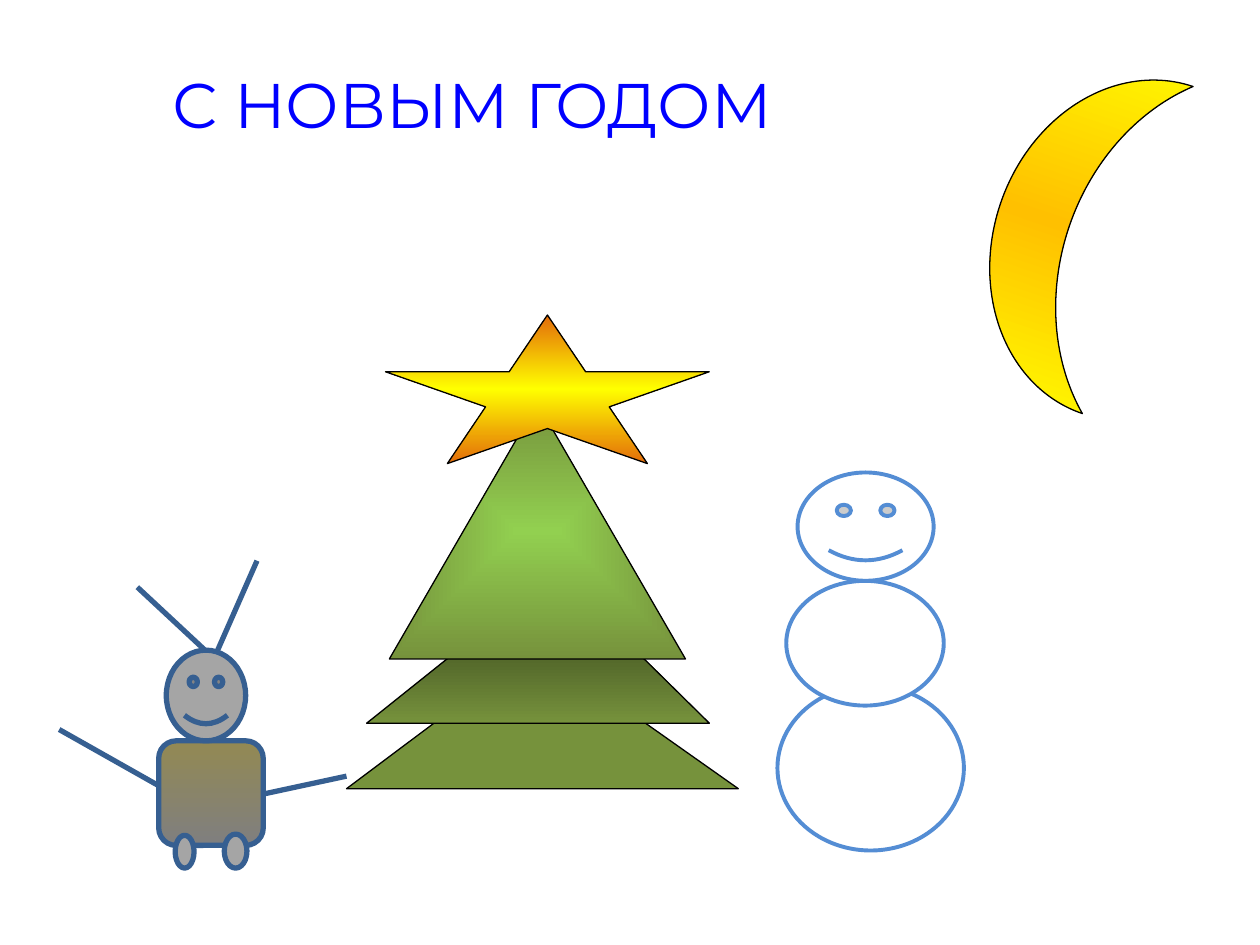
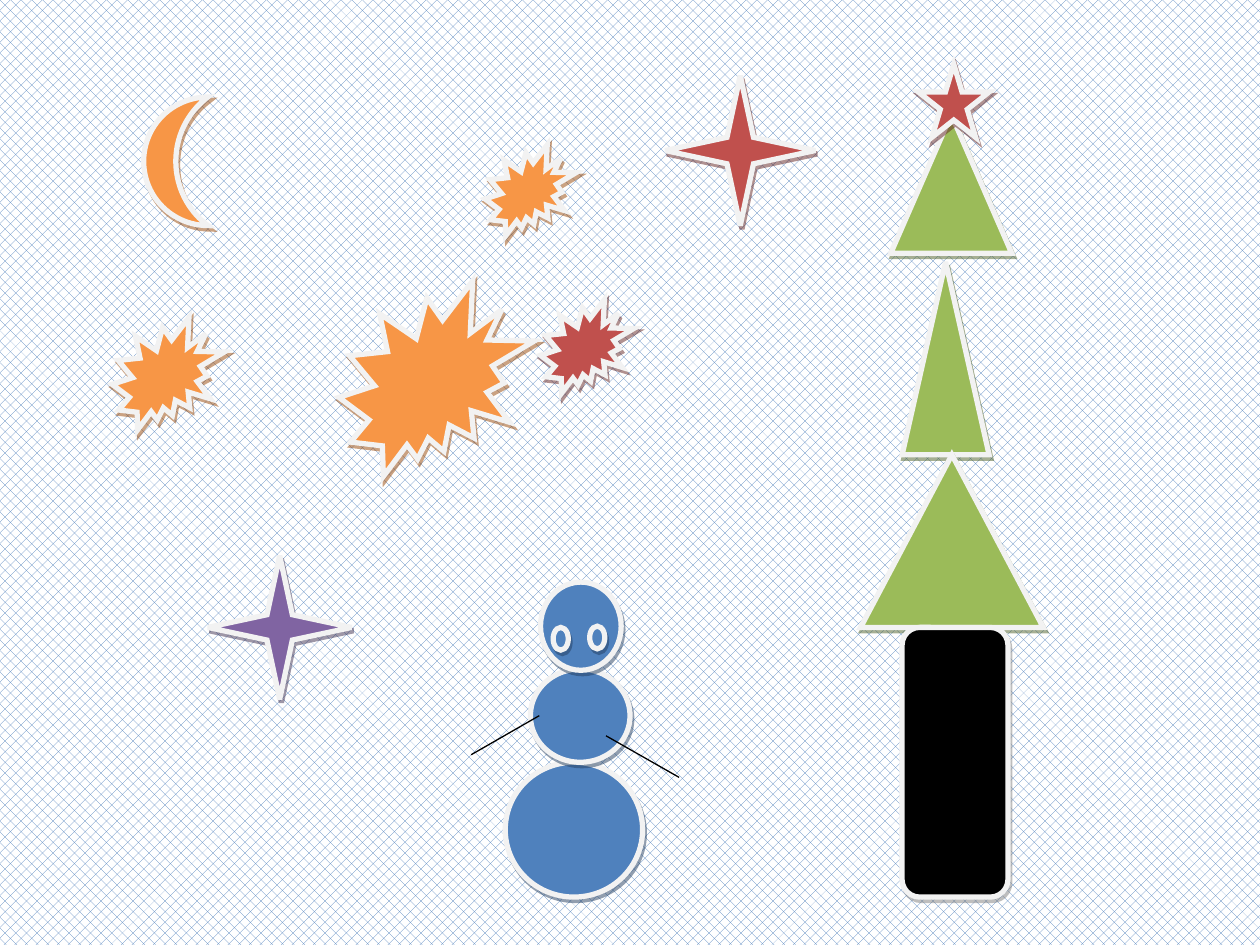
from lxml.etree import SubElement
from pptx import Presentation
from pptx.dml.color import RGBColor
from pptx.enum.dml import MSO_PATTERN
from pptx.enum.shapes import MSO_CONNECTOR, MSO_SHAPE
from pptx.enum.text import PP_ALIGN
from pptx.oxml.ns import qn
from pptx.util import Inches, Pt

# Colours
WHITE = RGBColor(0xFF, 0xFF, 0xFF)
BLACK = RGBColor(0, 0, 0)
BLUE = RGBColor(0x4F, 0x81, 0xBD)
SKY = RGBColor(0x54, 0x8D, 0xD4)
NAVY = RGBColor(0x36, 0x5F, 0x91)
DEEP_BLUE = RGBColor(0x24, 0x3F, 0x60)
PURE_BLUE = RGBColor(0, 0, 0xFF)
FIR = RGBColor(0x76, 0x92, 0x3C)
DARK_FIR = RGBColor(0x4E, 0x61, 0x28)
LIME = RGBColor(0x92, 0xD0, 0x50)
GREEN = RGBColor(0x9B, 0xBB, 0x59)
YELLOW = RGBColor(0xFF, 0xFF, 0)
GOLD = RGBColor(0xFF, 0xC0, 0)
AMBER = RGBColor(0xE3, 0x6C, 0x0A)
ORANGE = RGBColor(0xF7, 0x96, 0x46)
BROWN = RGBColor(0x97, 0x47, 0x06)
RED = RGBColor(0xC0, 0x50, 0x4D)
PURE_RED = RGBColor(0xFF, 0, 0)
MAROON = RGBColor(0x62, 0x24, 0x23)
PURPLE = RGBColor(0x80, 0x64, 0xA2)
DEEP_PURPLE = RGBColor(0x3F, 0x31, 0x51)
KHAKI = RGBColor(0x93, 0x89, 0x53)
GREY = RGBColor(0x7F, 0x7F, 0x7F)
SILVER = RGBColor(0xA5, 0xA5, 0xA5)
PALE = RGBColor(0xF2, 0xF2, 0xF2)

SHADOWS = {GREEN: DARK_FIR, BLACK: GREY, RED: MAROON, ORANGE: BROWN,
           PURPLE: DEEP_PURPLE, BLUE: DEEP_BLUE}

OVAL, SMILEY = MSO_SHAPE.OVAL, MSO_SHAPE.SMILEY_FACE
TRIANGLE, MOON = MSO_SHAPE.ISOSCELES_TRIANGLE, MSO_SHAPE.MOON
STAR4, STAR5 = MSO_SHAPE.STAR_4_POINT, MSO_SHAPE.STAR_5_POINT
BURST, ROUNDED = MSO_SHAPE.EXPLOSION2, MSO_SHAPE.ROUNDED_RECTANGLE

# Greeting slide: (preset, (left, top, width, height), fill[, adjustment])
# A tuple of colours is a gradient with evenly spaced stops.
GREETING = "С НОВЫМ ГОДОМ"
GREETING_PLACE = (1.02, 0.47, 5.46, 1.58)
ROUND_SNOWMAN = [
    (OVAL, (6.17, 5.44, 1.48, 1.31), WHITE),
    (OVAL, (6.24, 4.61, 1.25, 0.99), WHITE),
    (SMILEY, (6.33, 3.75, 1.08, 0.86), WHITE),
]
WIDE_TREE = [
    (TRIANGLE, (2.75, 5.13, 3.11, 1.13), FIR, 0.485),
    (TRIANGLE, (2.91, 4.54, 2.72, 1.2), (DARK_FIR, FIR), 0.552),
    (TRIANGLE, (3.09, 3.2, 2.35, 2.03), (LIME, FIR)),
    (STAR5, (3.06, 2.5, 2.57, 1.18), (AMBER, YELLOW, AMBER)),
]
BIG_MOON = (MOON, (7.91, 0.43, 1.15, 2.74), (YELLOW, GOLD, YELLOW))
MOON_TILT = 18.7
BUG_LIMBS = [
    ((1.32, 6.27), (0.47, 5.79)), ((1.96, 6.33), (2.75, 6.16)),
    ((1.67, 5.2), (1.09, 4.66)), ((1.71, 5.2), (2.04, 4.45)),
]
BUG = [
    (ROUNDED, (1.26, 5.88, 0.83, 0.83), (KHAKI, GREY)),
    (OVAL, (1.78, 6.62, 0.18, 0.27), SILVER),
    (OVAL, (1.39, 6.63, 0.15, 0.26), SILVER),
    (SMILEY, (1.32, 5.16, 0.63, 0.72), SILVER),
]

# Night slide
TALL_TREE = [
    (TRIANGLE, (7.07, 0.91, 0.96, 1.1), GREEN),
    (TRIANGLE, (7.16, 2.08, 0.69, 1.53), GREEN),
    (TRIANGLE, (6.83, 3.61, 1.45, 1.37), GREEN),
    (ROUNDED, (7.16, 4.98, 0.84, 2.14), BLACK),
    (STAR5, (7.29, 0.51, 0.56, 0.58), RED),
]
SKY_LIGHTS = [
    (BURST, (4.29, 2.38, 0.74, 0.74), RED),
    (BURST, (0.89, 2.52, 0.89, 0.89), ORANGE),
    (BURST, (2.69, 2.23, 1.55, 1.55), ORANGE),
    (BURST, (3.85, 1.15, 0.72, 0.72), ORANGE),
    (STAR4, (5.28, 0.6, 1.19, 1.19), RED),
    (STAR4, (1.65, 4.41, 1.14, 1.14), PURPLE),
    (MOON, (1.14, 0.77, 0.51, 1.02), ORANGE),
]
BLUE_SNOWMAN = [
    (OVAL, (4.01, 6.05, 1.09, 1.07), BLUE),
    (OVAL, (4.21, 5.31, 0.79, 0.74), BLUE),
    (OVAL, (4.29, 4.62, 0.64, 0.7), BLUE),
    (OVAL, (4.39, 4.98, 0.12, 0.18), BLUE),
    (OVAL, (4.68, 4.97, 0.12, 0.18), BLUE),
]
SNOWMAN_ARMS = [((4.81, 5.84), (5.39, 6.17)), ((4.28, 5.68), (3.74, 5.99))]


def inches(values):
    return [Inches(value) for value in values]


def paint_gradient(fill, element, colours, centred=False):
    fill.gradient()
    gradient = next(element.iter(qn("a:gradFill")))
    gradient[:] = []
    stops = SubElement(gradient, qn("a:gsLst"))
    for index, colour in enumerate(colours):
        position = 100000 * index // (len(colours) - 1)
        stop = SubElement(stops, qn("a:gs"), pos=str(position))
        SubElement(stop, qn("a:srgbClr"), val=str(colour))
    if centred:
        focus = SubElement(gradient, qn("a:path"), path="shape")
        SubElement(focus, qn("a:fillToRect"), l="50000", t="50000", r="50000", b="50000")
    else:
        SubElement(gradient, qn("a:lin"), ang="5400000", scaled="1")


def draw_shape(shapes, part, line_colour, line_width):
    preset, place, paint, *adjustment = part
    shape = shapes.add_shape(preset, *inches(place))
    shape.shadow.inherit = False
    if adjustment:
        shape.adjustments[0] = adjustment[0]
    if isinstance(paint, RGBColor):
        shape.fill.solid()
        shape.fill.fore_color.rgb = paint
    else:
        paint_gradient(shape.fill, shape.element, paint, centred=preset == TRIANGLE)
    shape.line.color.rgb = line_colour
    shape.line.width = Pt(line_width)
    return shape


def draw_sticker(shapes, part):
    """A shape with a thick pale rim, sharp corners and a hard shadow."""
    shape = draw_shape(shapes, part, PALE, 3)
    properties = shape.element.spPr
    SubElement(properties.find(qn("a:ln")), qn("a:miter"), lim="800000")
    shadow = SubElement(properties.find(qn("a:effectLst")), qn("a:outerShdw"),
                        dist=str(Pt(2.2)), dir=str(63 * 60000), rotWithShape="0")
    colour = SubElement(shadow, qn("a:srgbClr"), val=str(SHADOWS[part[2]]))
    SubElement(colour, qn("a:alpha"), val="50000")


def draw_lines(shapes, lines, colour, width):
    for start, end in lines:
        line = shapes.add_connector(MSO_CONNECTOR.STRAIGHT, *inches(start + end))
        line.line.color.rgb = colour
        line.line.width = Pt(width)
        SubElement(line.element.spPr, qn("a:effectLst"))


def draw_figure(page, parts, line_colour, line_width, limbs=()):
    figure = page.shapes.add_group_shape().shapes
    draw_lines(figure, limbs, line_colour, line_width)
    for part in parts:
        draw_shape(figure, part, line_colour, line_width)


def draw_greeting(page):
    box = page.shapes.add_textbox(*inches(GREETING_PLACE))
    box.text_frame.word_wrap = False
    para = box.text_frame.paragraphs[0]
    para.text = GREETING
    para.alignment = PP_ALIGN.CENTER
    font = para.runs[0].font
    font.name, font.size = "Montserrat", Pt(36)
    paint_gradient(font.fill, box.element, (PURE_BLUE, PURE_RED))


def build_greeting_slide(page):
    draw_figure(page, ROUND_SNOWMAN, SKY, 2.25)
    draw_figure(page, WIDE_TREE, BLACK, 0.75)
    draw_shape(page.shapes, BIG_MOON, BLACK, 0.75).rotation = MOON_TILT
    draw_greeting(page)
    draw_figure(page, BUG, NAVY, 3, BUG_LIMBS)


def build_night_slide(page, width, height):
    # Patterned backdrop
    backdrop = page.shapes.add_shape(MSO_SHAPE.RECTANGLE, 0, 0, width, height)
    backdrop.shadow.inherit = False
    backdrop.fill.patterned()
    backdrop.fill.pattern = MSO_PATTERN.from_xml("pct40")
    backdrop.fill.fore_color.rgb = BLUE
    backdrop.fill.back_color.rgb = WHITE
    backdrop.line.fill.background()

    # Tree, sky and snowman
    for parts in (TALL_TREE, SKY_LIGHTS, BLUE_SNOWMAN):
        figure = page.shapes.add_group_shape().shapes
        for part in parts:
            draw_sticker(figure, part)
    draw_lines(figure, SNOWMAN_ARMS, BLACK, 0.75)


def main():
    deck = Presentation()
    deck.slide_width, deck.slide_height = Inches(10), Inches(7.5)
    blank = deck.slide_layouts[6]
    build_greeting_slide(deck.slides.add_slide(blank))
    build_night_slide(deck.slides.add_slide(blank), deck.slide_width, deck.slide_height)
    deck.save("out.pptx")


if __name__ == "__main__":
    main()
